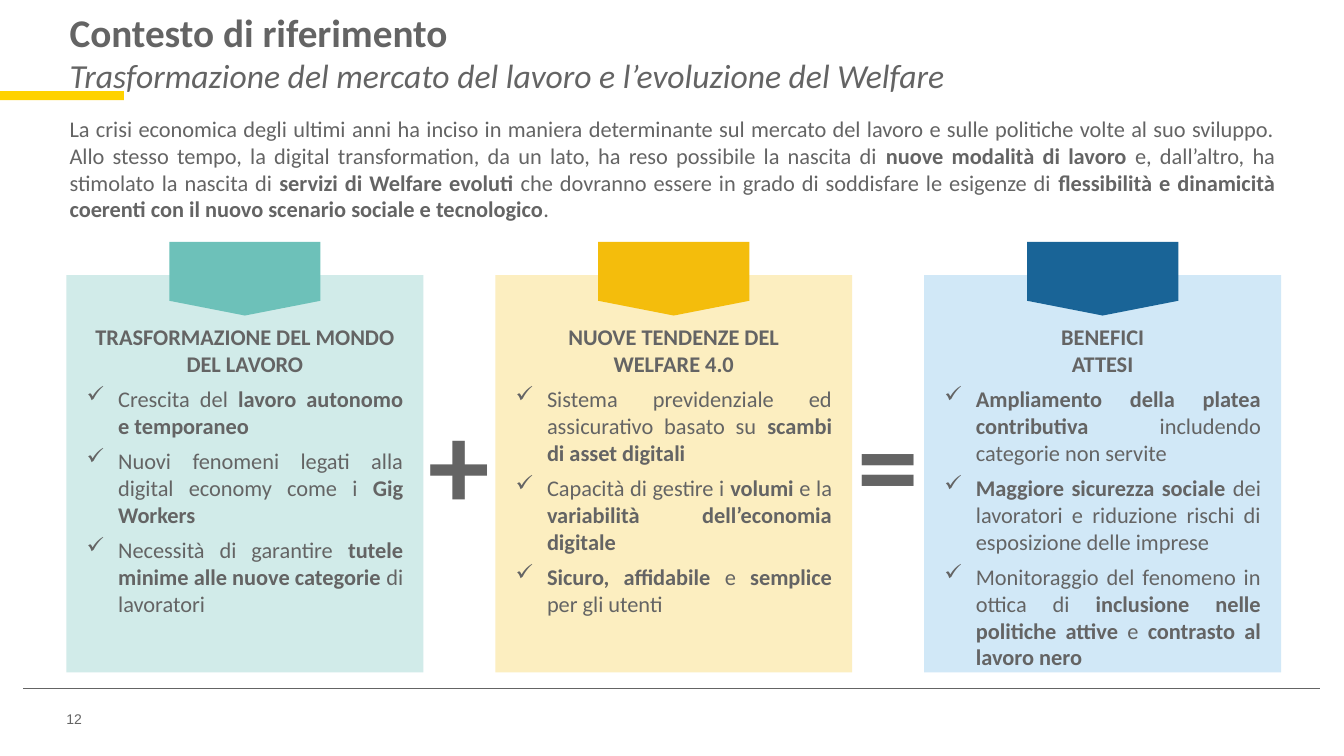
from lxml.etree import SubElement
from pptx import Presentation
from pptx.dml.color import RGBColor
from pptx.enum.shapes import MSO_CONNECTOR, MSO_SHAPE as SHAPE
from pptx.enum.text import MSO_ANCHOR as ANCHOR, MSO_AUTO_SIZE as AUTOSIZE, PP_ALIGN as ALIGN
from pptx.oxml.ns import qn
from pptx.util import Pt

COLORS = {
    "text": "646464", "accent": "FFD200",
    "teal": "6DC1B9", "pale_teal": "D1EBE9",
    "gold": "F4BD0C", "pale_gold": "FCEEC0",
    "blue": "196497", "pale_blue": "D1E8F7",
}
CARD_LEFT, CARD_TOP, CARD_WIDTH, CARD_HEIGHT = 47.5, 196.6, 254.9, 283.7
CARD_STEP = 306.35
TAB_TOP, TAB_WIDTH, TAB_HEIGHT = 172.8, 108, 52.6
OPERATOR_TOP, OPERATOR_WIDTH, OPERATOR_HEIGHT = 272.4, 77.8, 113.8
INDENT = 22.5

# Double asterisks enclose bold words.
INTRO = (
    "La crisi economica degli ultimi anni ha inciso in maniera determinante sul mercato del "
    "lavoro e sulle politiche volte al suo sviluppo. Allo stesso tempo, la digital "
    "transformation, da un lato, ha reso possibile la nascita di **nuove modalità di lavoro **"
    "e, dall’altro, ha stimolato la nascita di **servizi di Welfare evoluti **che dovranno "
    "essere in grado di soddisfare le esigenze di **flessibilità e dinamicità coerenti con il "
    "nuovo scenario sociale e tecnologico**."
)
CARDS = [
    ("teal", ["TRASFORMAZIONE DEL MONDO DEL LAVORO"], [
        "Crescita del **lavoro autonomo e temporaneo**",
        "Nuovi fenomeni legati alla digital economy come i **Gig Workers**",
        "Necessità di garantire **tutele minime alle nuove categorie **di lavoratori",
    ]),
    ("gold", ["NUOVE TENDENZE DEL", "WELFARE 4.0"], [
        "Sistema previdenziale ed assicurativo basato su **scambi di asset digitali**",
        "Capacità di gestire i **volumi** e la **variabilità dell’economia digitale**",
        "**Sicuro, affidabile** e **semplice** per gli utenti",
    ]),
    ("blue", ["BENEFICI", "ATTESI"], [
        "**Ampliamento della platea contributiva **includendo categorie non servite",
        "**Maggiore sicurezza sociale **dei lavoratori e riduzione rischi di esposizione "
        "delle imprese",
        "Monitoraggio del fenomeno in ottica di **inclusione nelle politiche attive **e "
        "**contrasto al lavoro nero**",
    ]),
]


def color(name):
    return RGBColor.from_string(COLORS[name])


def place(shape, left, top, width, height):
    shape.left, shape.top = Pt(left), Pt(top)
    shape.width, shape.height = Pt(width), Pt(height)


def set_frame(frame, margins=(0, 0, 0, 0), anchor=ANCHOR.TOP):
    frame.word_wrap = True
    frame.auto_size = AUTOSIZE.NONE
    frame.vertical_anchor = anchor
    frame.margin_left, frame.margin_top, frame.margin_right, frame.margin_bottom = map(Pt, margins)


def set_bullet(paragraph, char=None):
    properties = paragraph._p.get_or_add_pPr()
    indent = INDENT if char else 0
    properties.set("marL", str(Pt(indent)))
    properties.set("indent", str(-Pt(indent)))
    if char:
        SubElement(properties, qn("a:buChar")).set("char", char)
    else:
        SubElement(properties, qn("a:buNone"))


def format_paragraph(paragraph, size, align=ALIGN.LEFT, bold=None, after=0, family="Calibri"):
    paragraph.alignment = align
    paragraph.space_before, paragraph.space_after = Pt(0), Pt(after)
    font = paragraph.font
    font.name, font.size, font.bold = family, Pt(size), bold
    font.color.rgb = color("text")


def add_rich_runs(paragraph, text):
    for position, part in enumerate(text.split("**")):
        if part:
            run = paragraph.add_run()
            run.text = part
            run.font.bold = position % 2 == 1


def add_filled(slide, preset, fill, *box):
    shape = slide.shapes.add_shape(preset, *map(Pt, box))
    shape.shadow.inherit = False
    shape.fill.solid()
    shape.fill.fore_color.rgb = color(fill)
    shape.line.fill.background()
    return shape


def add_label(slide, text, box, size, align=ALIGN.LEFT, anchor=ANCHOR.TOP,
              margins=(0, 0, 0, 0), **style):
    label = slide.shapes.add_textbox(*map(Pt, box))
    set_frame(label.text_frame, margins, anchor)
    paragraph = label.text_frame.paragraphs[0]
    paragraph.text = text
    format_paragraph(paragraph, size, align, **style)


def add_card(slide, left, hue, heading, points):
    card = add_filled(slide, SHAPE.RECTANGLE, "pale_" + hue,
                      left, CARD_TOP, CARD_WIDTH, CARD_HEIGHT)
    frame = card.text_frame
    set_frame(frame, (14.4, 34, 14.4, 14.4))
    frame.text = "\n".join(heading)
    for line in frame.paragraphs:
        format_paragraph(line, 16, ALIGN.CENTER, bold=True)
    frame.paragraphs[-1].space_after = Pt(6)
    for point in points:
        paragraph = frame.add_paragraph()
        set_bullet(paragraph, "✓")
        format_paragraph(paragraph, 16, ALIGN.JUSTIFY, after=6)
        add_rich_runs(paragraph, point)
    add_filled(slide, SHAPE.FLOWCHART_OFFPAGE_CONNECTOR, hue,
               left + (CARD_WIDTH - TAB_WIDTH) / 2, TAB_TOP, TAB_WIDTH, TAB_HEIGHT)


def add_footer(slide):
    rule = slide.shapes.add_connector(MSO_CONNECTOR.STRAIGHT,
                                      Pt(16.6), Pt(491.6), Pt(943), Pt(491.6))
    rule.line.color.rgb = color("text")
    rule.line.width = Pt(0.25)
    SubElement(rule._element.spPr, qn("a:effectLst"))
    add_label(slide, "12", (47.5, 504.7, 131.8, 17.3), 10, anchor=ANCHOR.MIDDLE, family="Arial")


def fill_title(title):
    place(title, 49.7, 9.4, 861.1, 55.4)
    set_frame(title.text_frame, anchor=ANCHOR.MIDDLE)
    title.text_frame.text = ("Contesto di riferimento\n"
                             "Trasformazione del mercato del lavoro e l’evoluzione del Welfare")
    heading, subtitle = title.text_frame.paragraphs
    format_paragraph(heading, 28, bold=True)
    format_paragraph(subtitle, 24, bold=False)
    subtitle.font.italic = True


def fill_intro(intro):
    place(intro, 49.7, 78.5, 861.1, 85)
    set_frame(intro.text_frame, (0, 3.6, 0, 3.6))
    paragraph = intro.text_frame.paragraphs[0]
    set_bullet(paragraph)
    format_paragraph(paragraph, 16, ALIGN.JUSTIFY)
    add_rich_runs(paragraph, INTRO)


def main():
    deck = Presentation()
    deck.slide_width, deck.slide_height = Pt(960), Pt(540)
    slide = deck.slides.add_slide(deck.slide_layouts[1])

    # Heading and introduction
    add_filled(slide, SHAPE.RECTANGLE, "accent", 0, 65.2, 88.6, 6.4)
    fill_title(slide.shapes.title)
    fill_intro(slide.placeholders[1])

    # Cards joined by operators
    for index, (hue, heading, points) in enumerate(CARDS):
        add_card(slide, CARD_LEFT + index * CARD_STEP, hue, heading, points)
    gap_center = CARD_LEFT + (CARD_WIDTH + CARD_STEP) / 2
    for index, operator in enumerate("+="):
        left = gap_center + index * CARD_STEP - OPERATOR_WIDTH / 2
        add_label(slide, operator, (left, OPERATOR_TOP, OPERATOR_WIDTH, OPERATOR_HEIGHT), 88,
                  ALIGN.CENTER, margins=(7.2, 3.6, 7.2, 3.6), bold=True)

    # Footer
    add_footer(slide)
    deck.save("out.pptx")


if __name__ == "__main__":
    main()
